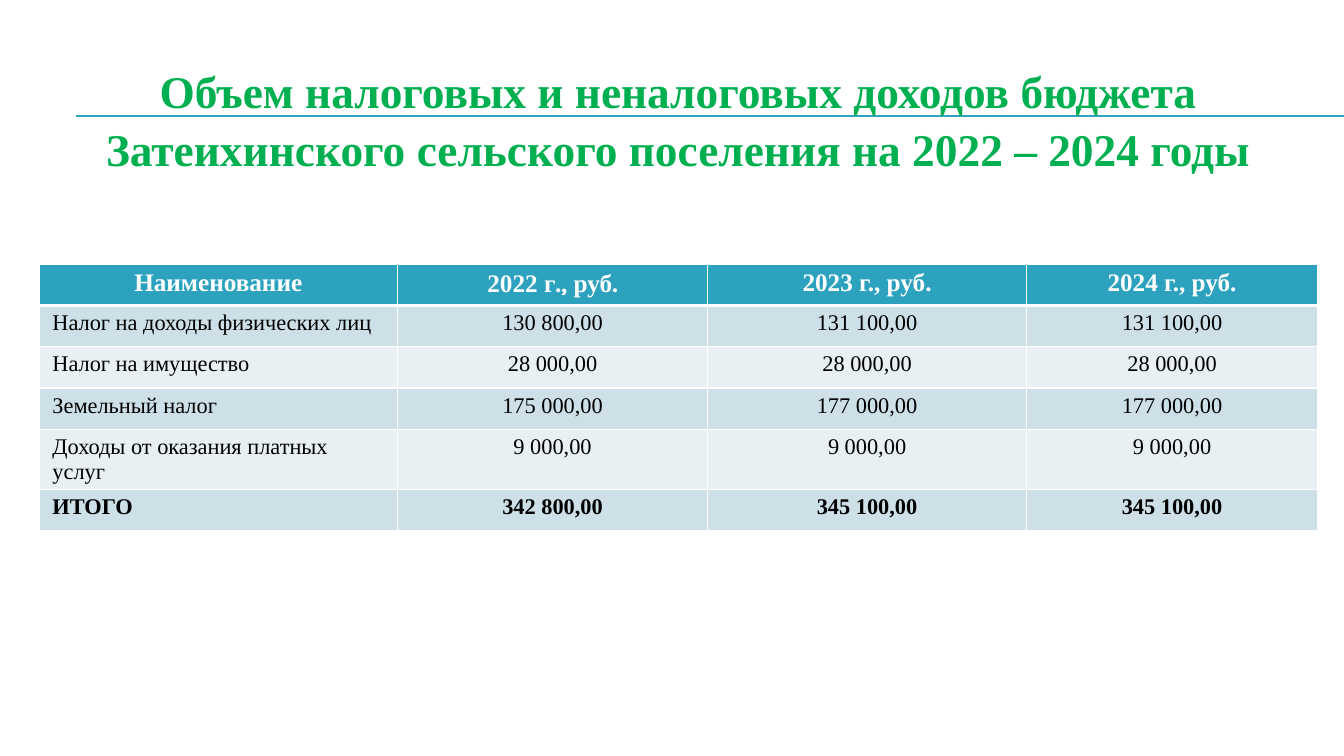
from dataclasses import dataclass

from lxml.etree import SubElement
from pptx import Presentation
from pptx.dml.color import RGBColor
from pptx.enum.shapes import MSO_CONNECTOR
from pptx.enum.text import MSO_ANCHOR, MSO_AUTO_SIZE, PP_ALIGN
from pptx.oxml.ns import qn
from pptx.util import Inches, Pt

TITLE = ("Объем налоговых и неналоговых доходов бюджета "
         "Затеихинского сельского поселения на 2022 – 2024 годы")
# Each heading is a list of spans; odd-numbered spans take the second font.
HEADINGS = [
    ["Наименование"],
    ["2022 г", "., ", "руб", "."],
    ["2023 г., руб."],
    ["2024 г., руб."],
]
INCOME = [
    ("Налог на доходы физических лиц", "130 800,00", "131 100,00", "131 100,00"),
    ("Налог на имущество", "28 000,00", "28 000,00", "28 000,00"),
    ("Земельный налог", "175 000,00", "177 000,00", "177 000,00"),
    ("Доходы от оказания платных услуг", "9 000,00", "9 000,00", "9 000,00"),
    ("ИТОГО", "342 800,00", "345 100,00", "345 100,00"),
]
COLUMN_WIDTHS = (3.55, 3.08, 3.16, 2.89)
ROW_HEIGHT = 0.41
RULE_HEIGHTS = (1.15, 1.16)


@dataclass(frozen=True)
class Theme:
    font: str = "Times New Roman"
    second_font: str = "Karla"
    title: str = "00B050"
    accent: str = "2DA2BF"
    bands: tuple = ("CDE0E8", "E8F0F4")
    white: str = "FFFFFF"
    text: str = "000000"
    title_size: float = 32.4
    heading_size: int = 18
    body_size: int = 16


THEME = Theme()


def color(value):
    return RGBColor.from_string(value)


def style_font(font, size, value, bold):
    font.name, font.size, font.bold = THEME.font, Pt(size), bold
    font.color.rgb = color(value)


def add_rule(page, height):
    rule = page.shapes.add_connector(
        MSO_CONNECTOR.STRAIGHT, Inches(0.75), Inches(height), Inches(13.33), Inches(height))
    rule.line.color.rgb = color(THEME.accent)
    rule.line.width = Pt(0.75)
    SubElement(rule._element.spPr, qn("a:effectLst"))


def add_title(page):
    """Format the title and bring it in front of the rules."""
    title = page.shapes.title
    title.left, title.top = Inches(0.73), Inches(0.52)
    title.width, title.height = Inches(11.99), Inches(1.3)
    frame = title.text_frame
    frame.text = TITLE
    frame.word_wrap = True
    frame.auto_size = MSO_AUTO_SIZE.NONE
    frame.vertical_anchor = MSO_ANCHOR.MIDDLE
    para = frame.paragraphs[0]
    para.alignment = PP_ALIGN.CENTER
    para.line_spacing = 1.05
    style_font(para.font, THEME.title_size, THEME.title, True)
    page.shapes._spTree.append(title._element)


def add_borders(cell, top, bottom):
    """Draw white borders; call before filling, as the schema puts lines first."""
    properties = cell._tc.get_or_add_tcPr()
    for side, width in (("L", 1), ("R", 1), ("T", top), ("B", bottom)):
        line = SubElement(properties, qn(f"a:ln{side}"), w=str(Pt(width)))
        fill = SubElement(line, qn("a:solidFill"))
        SubElement(fill, qn("a:srgbClr"), val=THEME.white)


def fill_cell(cell, spans, row, column):
    heading = row == 0
    add_borders(cell, top=3 if row == 1 else 1, bottom=3 if heading else 1)
    cell.fill.solid()
    cell.fill.fore_color.rgb = color(THEME.accent if heading else THEME.bands[(row - 1) % 2])
    cell.margin_left = cell.margin_right = Inches(0.13)
    cell.margin_top = cell.margin_bottom = Inches(0.05)
    para = cell.text_frame.paragraphs[0]
    para.alignment = PP_ALIGN.CENTER if heading or column else PP_ALIGN.LEFT
    style_font(para.font,
               THEME.heading_size if heading else THEME.body_size,
               THEME.white if heading else THEME.text,
               heading or row == len(INCOME))
    for index, text in enumerate(spans):
        span = para.add_run()
        span.text = text
        if index % 2:
            span.font.name = THEME.second_font


def add_income_table(page):
    rows = [HEADINGS] + [[[text] for text in line] for line in INCOME]
    table = page.shapes.add_table(
        len(rows), len(COLUMN_WIDTHS), Inches(0.39), Inches(2.62),
        Inches(sum(COLUMN_WIDTHS)), Inches(ROW_HEIGHT * len(rows))).table
    for column, width in zip(table.columns, COLUMN_WIDTHS):
        column.width = Inches(width)
    for row, line in enumerate(rows):
        table.rows[row].height = Inches(ROW_HEIGHT)
        for column, spans in enumerate(line):
            fill_cell(table.cell(row, column), spans, row, column)


def main():
    deck = Presentation()
    deck.slide_width, deck.slide_height = Inches(13.33), Inches(7.5)
    page = deck.slides.add_slide(deck.slide_layouts[5])
    for height in RULE_HEIGHTS:
        add_rule(page, height)
    add_title(page)
    add_income_table(page)
    deck.save("out.pptx")


if __name__ == "__main__":
    main()
